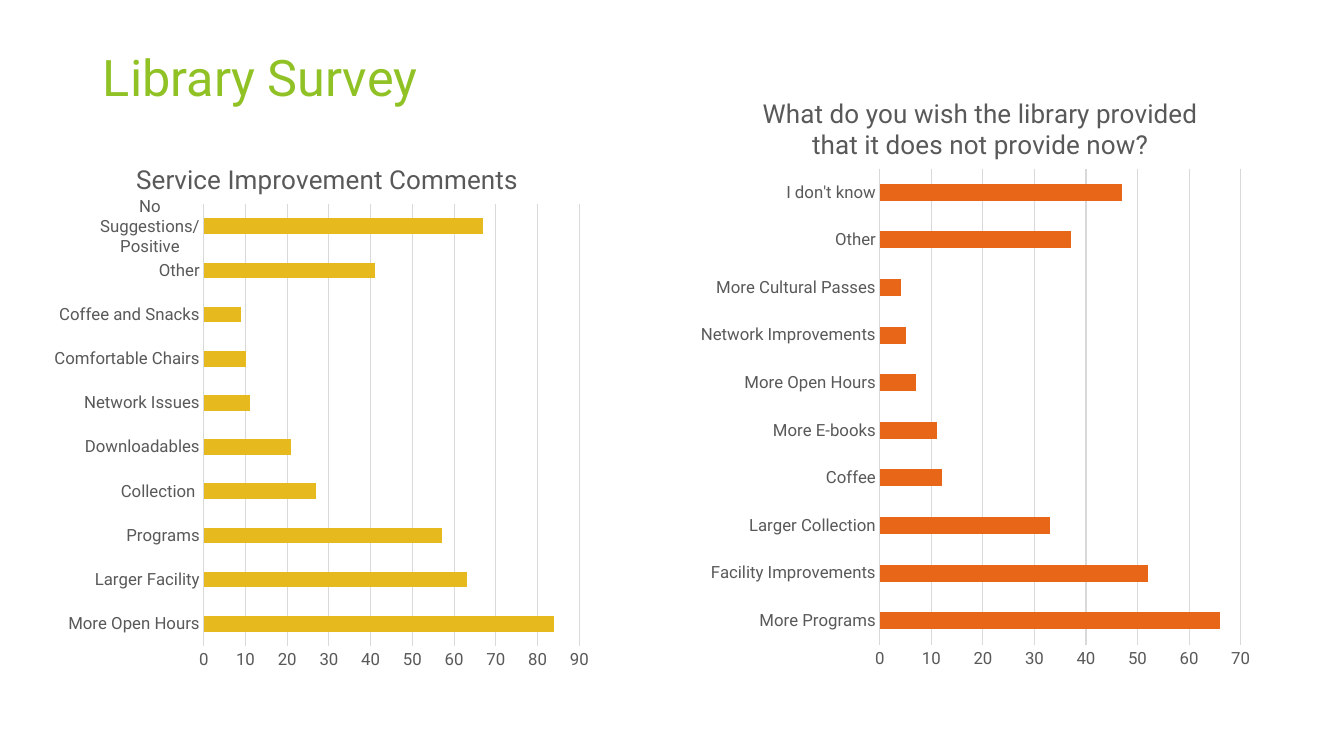
from lxml import etree
from pptx import Presentation
from pptx import util as u
from pptx.chart.data import CategoryChartData
from pptx.dml.color import RGBColor
from pptx.enum import chart as ch, text
from pptx.oxml import ns

FONT = "Roboto"
GREEN = RGBColor(0x90, 0xC2, 0x26)
YELLOW = RGBColor(0xE6, 0xB9, 0x1E)
ORANGE = RGBColor(0xE7, 0x66, 0x18)
GRAY = RGBColor(0x59, 0x59, 0x59)
LIGHT = RGBColor(0xD9, 0xD9, 0xD9)


def write(frame, wording, size, color):
    frame.text = wording
    font = frame.paragraphs[0].runs[0].font
    font.name, font.size, font.bold = FONT, u.Pt(size), False
    font.color.rgb = color


def set_layout(parent, index, **settings):
    """Give a chart part a manual layout, as child number index."""
    for old in parent.findall(ns.qn("c:layout")):
        parent.remove(old)
    layout = etree.Element(ns.qn("c:layout"))
    manual = etree.SubElement(layout, ns.qn("c:manualLayout"))
    for tag, value in settings.items():
        etree.SubElement(manual, ns.qn("c:" + tag), val=str(value))
    parent.insert(index, layout)


prs = Presentation()
prs.slide_width, prs.slide_height = u.Cm(33.87), u.Cm(19.05)
slide = prs.slides.add_slide(prs.slide_layouts[5])

heading = slide.shapes.title
heading.left, heading.top = u.Cm(2.34), u.Cm(1.02)
heading.width, heading.height = u.Cm(29.21), u.Cm(1.8)
write(heading.text_frame, "Library Survey", 36, GREEN)
heading.text_frame.vertical_anchor = text.MSO_ANCHOR.MIDDLE
heading.text_frame.paragraphs[0].alignment = text.PP_ALIGN.LEFT

# question, colour, chart box (cm), title corner, plot box (shares of the chart), axis end, answers
surveys = [
    ("Service Improvement Comments", YELLOW, (1.07, 3.43, 14.02, 13.74),
     (0.16, 0.04), (0.29, 0.125, 0.675, 0.81), 90,
     {"More Open Hours": 84, "Larger Facility": 63, "Programs": 57, "Collection ": 27,
      "Downloadables": 21, "Network Issues": 11, "Comfortable Chairs": 10,
      "Coffee and Snacks": 9, "Other": 41, "No Suggestions/Positive": 67}),
    ("What do you wish the library provided that it does not provide now?", ORANGE,
     (17.37, 1.7, 14.43, 15.44), (0.12, 0.04), (0.333, 0.165, 0.63, 0.777), 70,
     {"More Programs": 66, "Facility Improvements": 52, "Larger Collection": 33, "Coffee": 12,
      "More E-books": 11, "More Open Hours": 7, "Network Improvements": 5,
      "More Cultural Passes": 4, "Other": 37, "I don't know": 47}),
]

for question, color, box, corner, plot_box, axis_end, answers in surveys:
    data = CategoryChartData()
    data.categories = list(answers)
    data.add_series("Series 1", list(answers.values()))
    chart = slide.shapes.add_chart(
        ch.XL_CHART_TYPE.BAR_CLUSTERED, *[u.Cm(n) for n in box], data).chart
    chart.has_legend = False
    chart.font.name, chart.font.size = FONT, u.Pt(10)

    chart.has_title = True
    write(chart.chart_title.text_frame, question, 18.6, GRAY)
    chart.chart_title.include_in_layout = False
    set_layout(chart.element.find(".//" + ns.qn("c:title")), 1,
               xMode="edge", yMode="edge", x=corner[0], y=corner[1])
    x, y, w, h = plot_box
    set_layout(chart.element.find(".//" + ns.qn("c:plotArea")), 0, layoutTarget="inner",
               xMode="edge", yMode="edge", x=x, y=y, w=w, h=h)

    bars = chart.plots[0]
    bars.gap_width = 182
    bars.vary_by_categories = False
    bars.series[0].format.fill.solid()
    bars.series[0].format.fill.fore_color.rgb = color

    for axis in (chart.category_axis, chart.value_axis):
        axis.major_tick_mark = axis.minor_tick_mark = ch.XL_TICK_MARK.NONE
        labels = axis.tick_labels.font
        labels.name, labels.size = FONT, u.Pt(12)
        labels.color.rgb = GRAY
    scale = chart.value_axis
    scale.minimum_scale, scale.maximum_scale, scale.major_unit = 0, axis_end, 10
    scale.format.line.fill.background()
    scale.has_major_gridlines = True
    for line in (chart.category_axis.format.line, scale.major_gridlines.format.line):
        line.color.rgb = LIGHT
        line.width = u.Pt(0.75)

prs.save("out.pptx")
